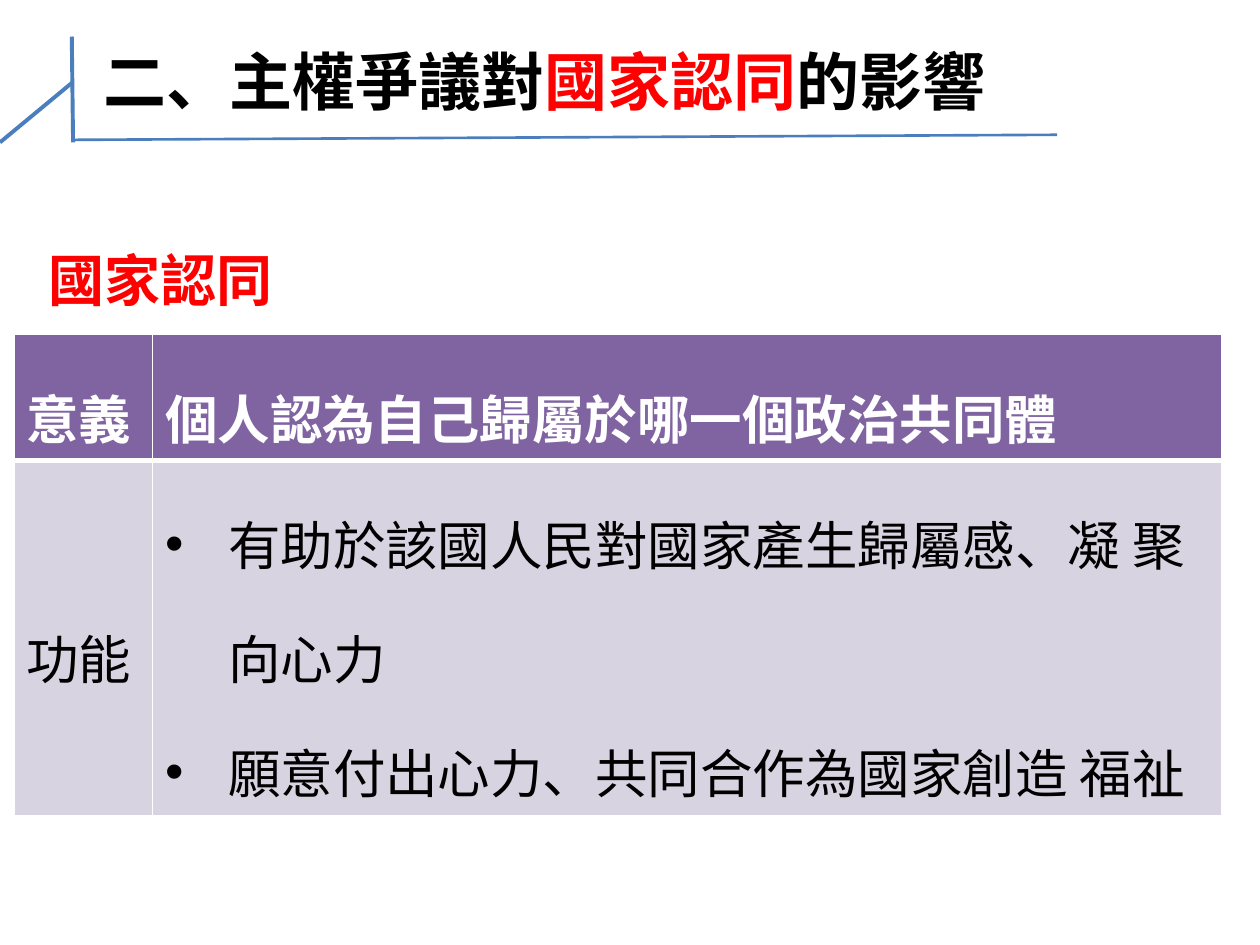
from pptx import Presentation
from pptx.dml.color import RGBColor
from pptx.enum.shapes import MSO_CONNECTOR
from pptx.enum.text import MSO_ANCHOR, MSO_AUTO_SIZE, PP_ALIGN
from pptx.oxml.ns import qn
from pptx.util import Inches, Pt
from lxml.etree import SubElement

BLACK = RGBColor(0x00, 0x00, 0x00)
WHITE = RGBColor(0xFF, 0xFF, 0xFF)
RED = RGBColor(0xFF, 0x00, 0x00)
BLUE = RGBColor(0x4B, 0x7E, 0xBC)
PURPLE = RGBColor(0x80, 0x64, 0xA2)
LILAC = RGBColor(0xD8, 0xD3, 0xE0)


class Deck:
    face = "Noto Sans CJK SC"

    def __init__(self, prs):
        self.slide = prs.slides.add_slide(prs.slide_layouts[5])

    def style(self, para, size, color, bold):
        font = para.font
        font.size, font.bold, font.name = Pt(size), bold, self.face
        font.color.rgb = color
        props = para._p.get_or_add_pPr().find(qn("a:defRPr"))
        SubElement(props, qn("a:ea")).set("typeface", self.face)

    def title(self, box, parts):
        shape = self.slide.shapes.title
        shape.left, shape.top, shape.width, shape.height = map(Inches, box)
        frame = shape.text_frame
        frame.auto_size = MSO_AUTO_SIZE.NONE
        frame.vertical_anchor = MSO_ANCHOR.MIDDLE
        para = frame.paragraphs[0]
        para.alignment = PP_ALIGN.LEFT
        self.style(para, 36, BLACK, True)
        for text, color in parts:
            run = para.add_run()
            run.text = text
            run.font.color.rgb = color

    def label(self, box, text):
        frame = self.slide.shapes.add_textbox(*map(Inches, box)).text_frame
        frame.word_wrap = False
        frame.auto_size = MSO_AUTO_SIZE.SHAPE_TO_FIT_TEXT
        para = frame.paragraphs[0]
        para.text = text
        self.style(para, 32, RED, True)

    def line(self, ends, width):
        line = self.slide.shapes.add_connector(
            MSO_CONNECTOR.STRAIGHT, *map(Inches, ends))
        line.line.color.rgb = BLUE
        line.line.width = Pt(width)
        SubElement(line._element.spPr, qn("a:effectLst"))

    def border(self, cell, base):
        """Draw white edges, with a bottom edge of base points."""
        props = cell._tc.get_or_add_tcPr()
        for side, width in zip("LRTB", (1, 1, 1, base)):
            edge = SubElement(props, qn("a:ln" + side))
            edge.set("w", str(Pt(width)))
            fill = SubElement(edge, qn("a:solidFill"))
            SubElement(fill, qn("a:srgbClr")).set("val", str(WHITE))

    def bullet(self, para):
        props = para._p.get_or_add_pPr()
        props.set("marL", str(Inches(0.5)))
        props.set("indent", str(Inches(-0.5)))
        SubElement(props, qn("a:buFont")).set("typeface", "Arial")
        SubElement(props, qn("a:buChar")).set("char", "•")

    def cell(self, cell, lines, head):
        self.border(cell, 3 if head else 1)
        cell.fill.solid()
        cell.fill.fore_color.rgb = PURPLE if head else LILAC
        cell.text = "\n".join(lines)
        for para in cell.text_frame.paragraphs:
            para.line_spacing = 1.5
            if len(lines) > 1:
                self.bullet(para)
            self.style(para, 30, WHITE if head else BLACK, head)

    def table(self, box, cols, rows, cells):
        table = self.slide.shapes.add_table(
            len(rows), len(cols), *map(Inches, box)).table
        for col, width in zip(table.columns, cols):
            col.width = Inches(width)
        for r, (row, high) in enumerate(zip(table.rows, rows)):
            row.height = Inches(high)
            for cell, lines in zip(row.cells, cells[r]):
                self.cell(cell, lines, r == 0)
            row.cells[0].vertical_anchor = MSO_ANCHOR.MIDDLE


def main():
    prs = Presentation()
    prs.slide_width, prs.slide_height = Inches(10), Inches(7.5)
    deck = Deck(prs)
    deck.title((0.72, 0.21, 9, 0.85), [
        ("二、主權爭議對", BLACK), ("國家認同", RED), ("的影響", BLACK)])
    deck.table((0.11, 2.65, 9.59, 3.21), (1.1, 8.49), (0.85, 2.36), [
        [["意義"], ["個人認為自己歸屬於哪一個政治共同體"]],
        [["功能"], ["有助於該國人民對國家產生歸屬感、凝 聚向心力",
                  "願意付出心力、共同合作為國家創造 福祉"]]])
    for ends, width in (((0, 1.13, 0.58, 0.65), 2.25),
                        ((0.57, 0.29, 0.58, 1.13), 2.25),
                        ((0.58, 1.11, 8.39, 1.07), 1.5)):
        deck.line(ends, width)
    deck.label((0.29, 1.9, 2, 0.64), "國家認同")
    prs.save("out.pptx")


if __name__ == "__main__":
    main()
